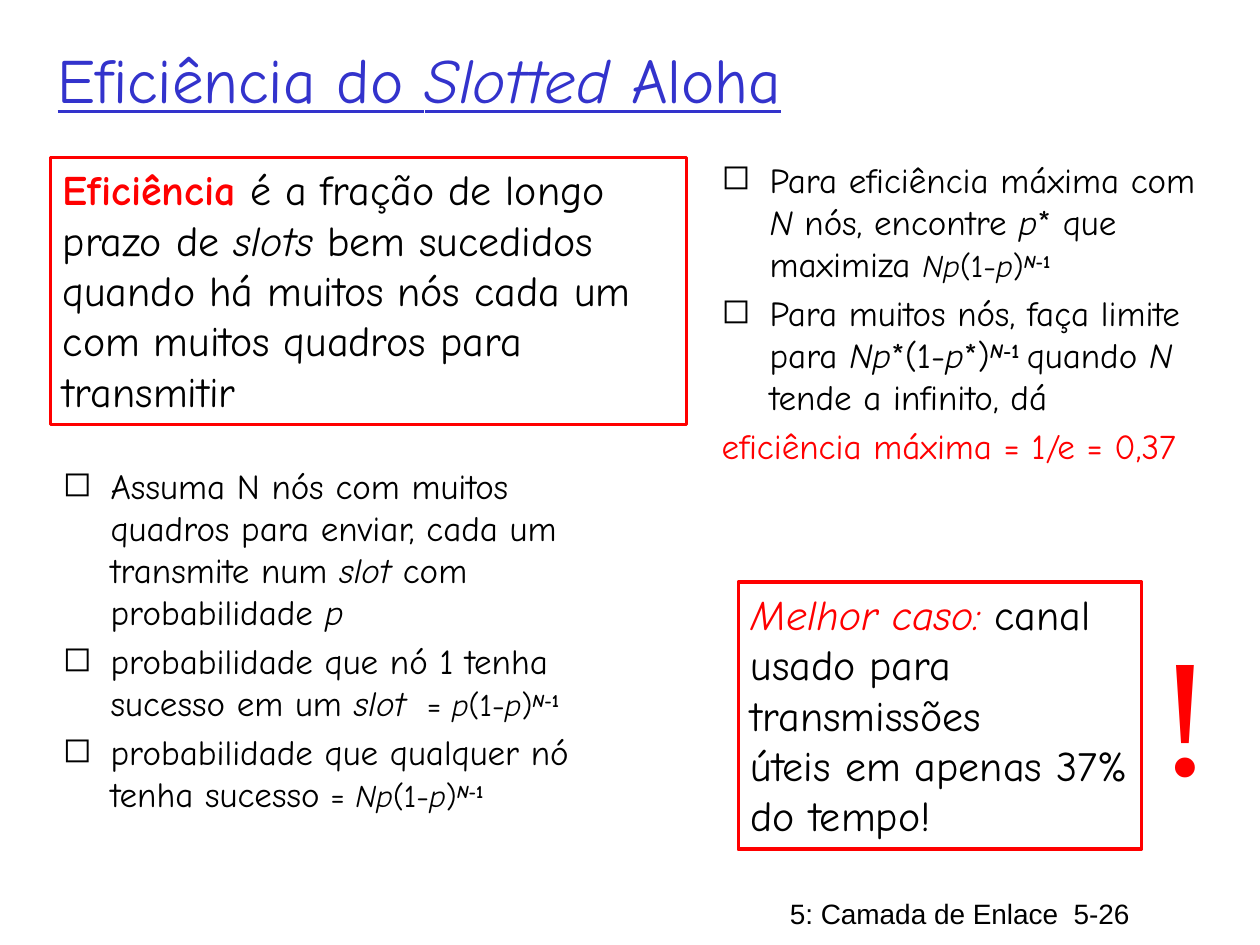
from lxml.etree import SubElement
from pptx import Presentation
from pptx.dml.color import RGBColor
from pptx.enum.shapes import MSO_SHAPE as SHAPE
from pptx.enum.text import MSO_ANCHOR as ANCHOR, PP_ALIGN as ALIGN
from pptx.oxml.ns import qn
from pptx.util import Inches, Pt

COLORS = {"ink": "000000", "title": "3333CC", "accent": "FF0000"}
BODY_FONT = "Comic Neue"


def add_runs(paragraph, runs, size, color="ink", font=BODY_FONT):
    """Each run is (text, flags, size): i italic, b bold, u underline, r red, ^ superscript."""
    paragraph.alignment = ALIGN.LEFT
    for text, flags, *own_size in runs:
        run = paragraph.add_run()
        run.text = text
        run.font.name = font
        run.font.size = Pt(own_size[0] if own_size else size)
        run.font.italic = "i" in flags
        run.font.bold = "b" in flags
        run.font.underline = "u" in flags
        run.font.color.rgb = RGBColor.from_string(COLORS["accent" if "r" in flags else color])
        if "^" in flags:
            run._r.get_or_add_rPr().set("baseline", "30000")


def add_text(left, top, width, height):
    frame = slide.shapes.add_textbox(Inches(left), Inches(top), Inches(width), Inches(height)).text_frame
    frame.word_wrap = True
    return frame


deck = Presentation()
deck.slide_width, deck.slide_height = Inches(10), Inches(7.5)
slide = deck.slides.add_slide(deck.slide_layouts[6])

# Footer and title
footer = add_text(6.17, 7.07, 3.83, 0.37)
add_runs(footer.paragraphs[0], [("5: Camada de Enlace  5-26", "")], 16, font="Arial")

title = add_text(0.36, 0, 8.5, 1.25)
title.vertical_anchor = ANCHOR.MIDDLE
title_runs = [("Eficiência do ", "u"), ("Slotted", "ui"), (" Aloha", "u")]
add_runs(title.paragraphs[0], title_runs, 36, "title")

# Bulleted columns: (has bullet, runs)
power = [("N", "bi^", 18), ("-1", "b^", 18)]
one_node = [("p", "i", 18), ("(1-", "", 18), ("p", "i", 18), (")", "", 18), *power]
any_node = [("Np", "i", 18), *one_node[1:]]

assumptions = [
    (True, [("Assuma N nós com muitos quadros para enviar, cada um transmite num ", ""),
            ("slot", "i"), (" com probabilidade ", ""), ("p", "i")]),
    (True, [("probabilidade que nó 1 tenha sucesso em um ", ""), ("slot", "i"),
            ("  = ", "", 18), *one_node]),
    (True, [("probabilidade que qualquer nó tenha sucesso", ""), (" = ", "", 18), *any_node]),
]
maximum = [
    (True, [("Para eficiência máxima com ", ""), ("N", "i"), (" nós, encontre ", ""),
            ("p", "i"), ("* que maximiza ", ""), *any_node]),
    (True, [("Para muitos nós, faça limite para ", ""), ("Np", "i"), ("*(1-", ""), ("p", "i"),
            ("*)", ""), ("N", "bi^"), ("-1 ", "b^"), ("quando ", ""), ("N", "i"),
            (" tende a infinito, dá", "")]),
    (False, [("eficiência máxima = 1/e = 0,37", "r")]),
]
for place, items in [((0.4, 3.64, 4.53, 3.66), assumptions), ((5.63, 1.21, 4.17, 3.46), maximum)]:
    column = add_text(*place)
    for index, (bulleted, runs) in enumerate(items):
        paragraph = column.add_paragraph() if index else column.paragraphs[0]
        if bulleted:
            properties = paragraph._p.get_or_add_pPr()
            properties.set("marL", str(Inches(0.38)))
            properties.set("indent", str(-Inches(0.38)))
            SubElement(properties, qn("a:buChar")).set("char", "◻")
        if index:
            paragraph.space_before = Pt(4)
        add_runs(paragraph, runs, 20)

# Framed definition and best case
definition = [[("Eficiência", "br"), (" é a fração de longo prazo de ", ""), ("slots", "i"),
               (" bem sucedidos quando há muitos nós cada um com muitos quadros para transmitir", "")]]
best_case = [[("Melhor caso:", "ir"), (" canal", "")],
             [("usado para transmissões", "")],
             [("úteis em apenas 37% do tempo!", "")]]
for place, lines in [((0.4, 1.25, 5.05, 2.12), definition), ((5.86, 4.62, 3.2, 2.12), best_case)]:
    frame = slide.shapes.add_shape(SHAPE.RECTANGLE, *map(Inches, place))
    frame.shadow.inherit = False
    frame.fill.background()
    frame.line.color.rgb = RGBColor.from_string(COLORS["accent"])
    frame.line.width = Pt(2)
    frame.text_frame.word_wrap = True
    frame.text_frame.vertical_anchor = ANCHOR.TOP
    for index, runs in enumerate(lines):
        paragraph = frame.text_frame.add_paragraph() if index else frame.text_frame.paragraphs[0]
        add_runs(paragraph, runs, 24)

# Exclamation mark
exclamation = add_text(9.09, 4.77, 0.52, 1.7)
exclamation.word_wrap = False
add_runs(exclamation.paragraphs[0], [("!", "")], 96, "accent", "Times New Roman")

deck.save("out.pptx")
